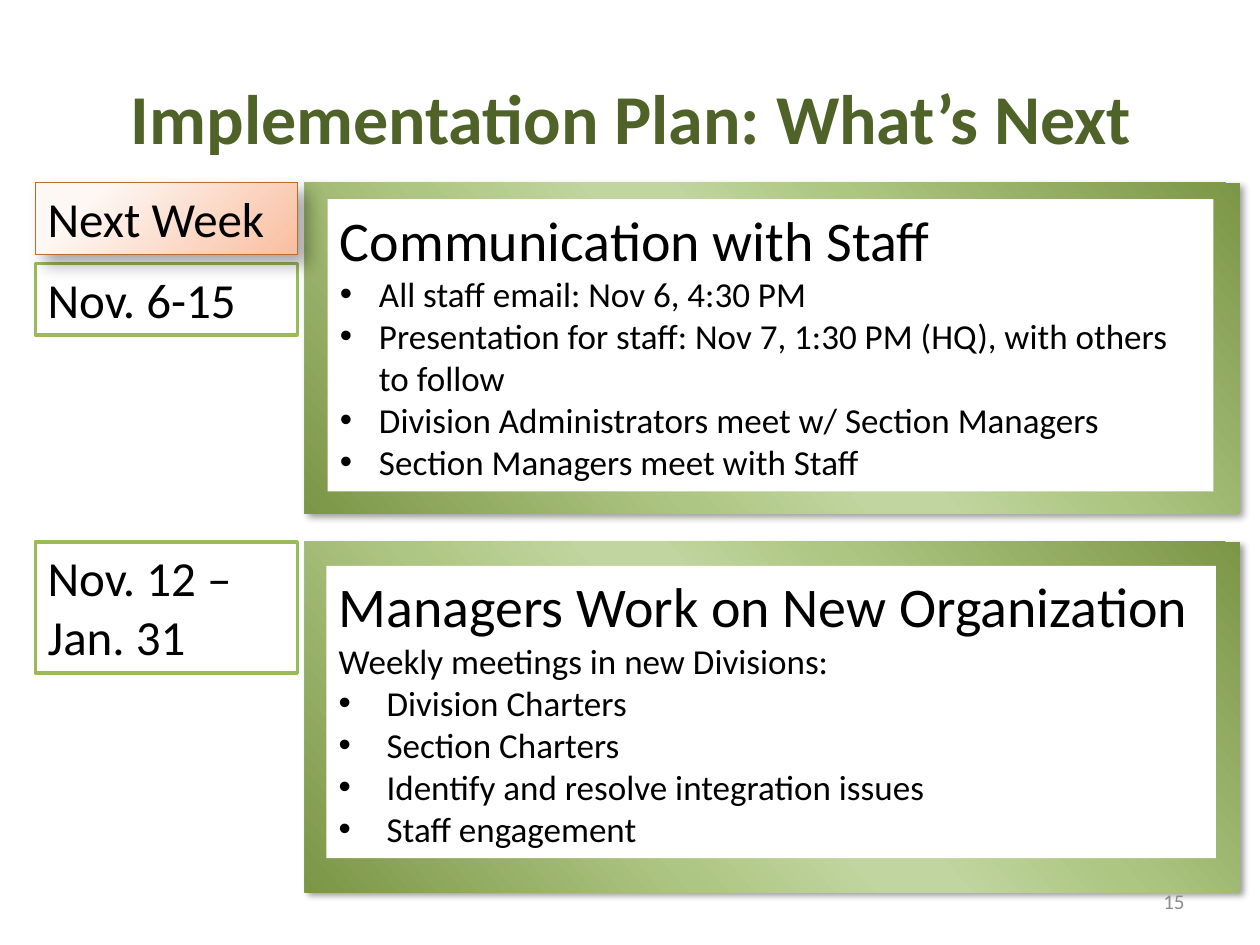
from dataclasses import dataclass

from lxml import etree
from pptx import Presentation
from pptx.dml.color import RGBColor
from pptx.enum.shapes import MSO_SHAPE
from pptx.enum.text import MSO_ANCHOR, MSO_AUTO_SIZE, PP_ALIGN
from pptx.oxml.ns import qn
from pptx.util import Inches, Pt

RECTANGLE = MSO_SHAPE.RECTANGLE
TOP, MIDDLE = MSO_ANCHOR.TOP, MSO_ANCHOR.MIDDLE
LEFT, CENTER, RIGHT = PP_ALIGN.LEFT, PP_ALIGN.CENTER, PP_ALIGN.RIGHT
GROW = MSO_AUTO_SIZE.SHAPE_TO_FIT_TEXT


@dataclass(frozen=True)
class Theme:
    font: str = "Calibri"
    title_size: int = 40
    heading_size: int = 32
    date_size: int = 28
    body_size: int = 20
    number_size: int = 12
    text: str = "000000"
    title: str = "4F6228"
    number: str = "8C8C8C"
    paper: str = "FFFFFF"
    date_line: str = "9BBB59"
    current_line: str = "BA6C2C"
    frame_stops: tuple = ((0, "7C9647"), (33, "ADC682"), (47, "C0D59F"),
                          (53, "C0D59F"), (68, "AEC683"), (100, "7C9647"))
    current_stops: tuple = ((20, "FEF8F5"), (100, "F9BE9F"))


THEME = Theme()
ROW_TOPS = (1.45, 4.3)
DATE_LEFT, DATE_WIDTH, DATE_HEIGHT = 0.28, 2.08, 0.57
FRAME_LEFT, FRAME_WIDTH = 2.42, 7.42


def add_element(parent, tag, **attributes):
    element = etree.SubElement(parent, qn(tag))
    for name, value in attributes.items():
        element.set(name, str(value))
    return element


def add_rectangle(slide, left, top, width, height):
    shape = slide.shapes.add_shape(
        RECTANGLE, Inches(left), Inches(top), Inches(width), Inches(height))
    shape.shadow.inherit = False
    shape.fill.solid()
    shape.fill.fore_color.rgb = RGBColor.from_string(THEME.paper)
    shape.line.fill.background()
    return shape


def set_line(shape, color, width):
    shape.line.color.rgb = RGBColor.from_string(color)
    shape.line.width = Pt(width)


def set_gradient(shape, stops, angle=None):
    """Blend along an angle in degrees, or outwards from the top left corner."""
    solid = shape._element.spPr.find(qn("a:solidFill"))
    gradient = etree.Element(qn("a:gradFill"), rotWithShape="1")
    stop_list = add_element(gradient, "a:gsLst")
    for position, color in stops:
        stop = add_element(stop_list, "a:gs", pos=position * 1000)
        add_element(stop, "a:srgbClr", val=color)
    if angle is None:
        circle = add_element(gradient, "a:path", path="circle")
        add_element(circle, "a:fillToRect", l=-15000, t=-15000, r=115000, b=115000)
    else:
        add_element(gradient, "a:lin", ang=angle * 60000, scaled=0)
    solid.getparent().replace(solid, gradient)


def set_shadow(shape, opacity, blur, distance):
    effects = shape._element.spPr.find(qn("a:effectLst"))
    shadow = add_element(effects, "a:outerShdw", blurRad=Pt(blur), dist=Pt(distance),
                         dir=45 * 60000, algn="tl", rotWithShape=0)
    color = add_element(shadow, "a:srgbClr", val=THEME.text)
    add_element(color, "a:alpha", val=opacity * 1000)


def set_bullet(paragraph, indent):
    properties = paragraph._p.get_or_add_pPr()
    properties.set("marL", str(Inches(indent)))
    properties.set("indent", str(-Inches(indent)))
    add_element(properties, "a:buFont", typeface="Arial")
    add_element(properties, "a:buChar", char="•")


def write_paragraph(paragraph, text, size, color=THEME.text, bold=False,
                    align=LEFT, indent=None):
    paragraph.text = text
    paragraph.alignment = align
    if indent:
        set_bullet(paragraph, indent)
    paragraph.font.name = THEME.font
    paragraph.font.size = Pt(size)
    paragraph.font.bold = bold
    paragraph.font.color.rgb = RGBColor.from_string(color)


def prepare_frame(shape, anchor=TOP):
    frame = shape.text_frame
    frame.word_wrap = True
    frame.vertical_anchor = anchor
    return frame


def add_label(slide, box, text, size, color, align, bold=False):
    shape = slide.shapes.add_textbox(*(Inches(length) for length in box))
    frame = prepare_frame(shape, MIDDLE)
    write_paragraph(frame.paragraphs[0], text, size, color, bold, align)


def add_date(slide, top, text, height=DATE_HEIGHT):
    shape = add_rectangle(slide, DATE_LEFT, top, DATE_WIDTH, height)
    set_line(shape, THEME.date_line, 2)
    frame = prepare_frame(shape)
    frame.auto_size = GROW
    write_paragraph(frame.paragraphs[0], text, THEME.date_size)
    return shape


def add_current_date(slide, top, text):
    shape = add_date(slide, top, text)
    set_gradient(shape, THEME.current_stops)
    set_line(shape, THEME.current_line, 0.75)
    set_shadow(shape, opacity=35, blur=10.2, distance=8)


def add_green_frame(slide, top, height):
    shape = add_rectangle(slide, FRAME_LEFT, top, FRAME_WIDTH, height)
    set_gradient(shape, THEME.frame_stops, angle=139)
    set_shadow(shape, opacity=40, blur=4, distance=3)


def add_panel(slide, box, heading, bullets, indent, intro=None):
    frame = prepare_frame(add_rectangle(slide, *box))
    frame.auto_size = GROW
    write_paragraph(frame.paragraphs[0], heading, THEME.heading_size)
    if intro:
        write_paragraph(frame.add_paragraph(), intro, THEME.body_size)
    for bullet in bullets:
        write_paragraph(frame.add_paragraph(), bullet, THEME.body_size, indent=indent)


def main():
    presentation = Presentation()
    presentation.slide_width, presentation.slide_height = Inches(10), Inches(7.5)
    slide = presentation.slides.add_slide(presentation.slide_layouts[6])
    first_top, second_top = ROW_TOPS

    add_date(slide, 2.09, "Nov. 6-15")
    add_date(slide, second_top, "Nov. 12 – Jan. 31", height=1.04)
    add_green_frame(slide, first_top, 2.63)
    add_green_frame(slide, second_top, 2.78)
    add_label(slide, (0.43, 0.3, 9.16, 1.25), "Implementation Plan: What’s Next",
              THEME.title_size, THEME.title, CENTER, bold=True)
    add_label(slide, (7.17, 6.95, 2.33, 0.4), "15",
              THEME.number_size, THEME.number, RIGHT)
    add_panel(slide, (2.6, 1.58, 7.03, 2.32), "Communication with Staff", (
        "All staff email: Nov 6, 4:30 PM",
        "Presentation for staff: Nov 7, 1:30 PM (HQ), with others to follow",
        "Division Administrators meet w/ Section Managers",
        "Section Managers meet with Staff",
    ), indent=0.31)
    add_panel(slide, (2.59, 4.49, 7.06, 2.32), "Managers Work on New Organization", (
        "Division Charters",
        "Section Charters",
        "Identify and resolve integration issues",
        "Staff engagement",
    ), indent=0.38, intro="Weekly meetings in new Divisions:")
    add_current_date(slide, first_top, "Next Week")

    presentation.save("out.pptx")


if __name__ == "__main__":
    main()
